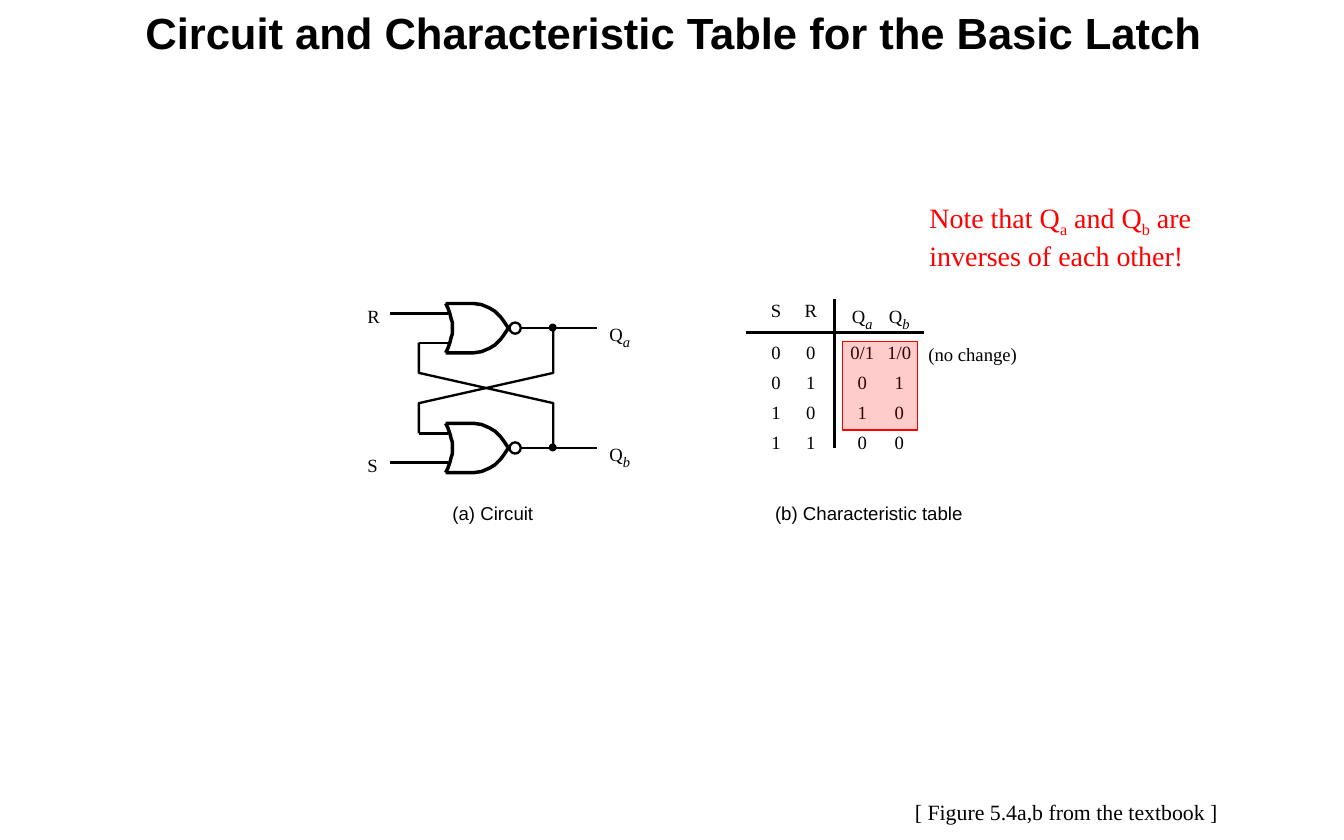
"""Build the slide on the circuit and characteristic table of the basic latch."""
import pptx
import pptx.dml.color
import pptx.enum.shapes
import pptx.enum.text
import pptx.oxml
import pptx.oxml.ns
import pptx.util
from dataclasses import dataclass
from pptx.util import Inches


@dataclass(frozen=True)
class Theme:
    ink: str = "000000"
    accent: str = "FF0000"
    sans: str = "Arial"
    serif: str = "Times New Roman"
    title: int = 28
    note: int = 18
    source: int = 14
    body: int = 12
    index: int = 16
    gate_line: float = 2.25
    wire_line: float = 1.5
    frame_line: float = 0.75


THEME = Theme()

# Odd items of a line of text are subscripts.
TITLE = [["Circuit and Characteristic Table for the Basic Latch"]]
NOTE = [["Note that Q", "a", " and Q", "b", " are"], ["inverses of each other!"]]
SOURCE = [["[ Figure 5.4a,b from the textbook ]"]]
CAPTIONS = [("(a) Circuit", 4.04, 0.73), ("(b) Characteristic table", 6.92, 1.69)]
REMARK = [["(no change)"]]
STATES = [
    [["S"], ["R"], ["Q", "a"], ["Q", "b"]],
    [["0"], ["0"], ["0/1"], ["1/0"]],
    [["0"], ["1"], ["0"], ["1"]],
    [["1"], ["0"], ["1"], ["0"]],
    [["1"], ["1"], ["0"], ["0"]],
]
GATES = [
    {"input": "R", "output": ["Q", "a"], "middle": 2.93, "inward": 1},
    {"input": "S", "output": ["Q", "b"], "middle": 4.0, "inward": -1},
]

GATE_FRONT = [(3.98, 0.22), (4.23, 0.22), (4.3, 0.21), (4.37, 0.18), (4.42, 0.15),
              (4.47, 0.1), (4.5, 0.06), (4.52, 0.03), (4.54, 0)]
GATE_BACK = [(3.98, 0.22), (4, 0.18), (4.02, 0.12), (4.03, 0.08), (4.04, 0.05), (4.04, 0)]
INPUT_LEFT, FEEDBACK_LEFT, GATE_LEFT = 3.48, 3.74, 4.0
BUBBLE, BUBBLE_LEFT, JUNCTION, OUTPUT_RIGHT = 0.1, 4.55, 4.94, 5.33
INPUT_OFFSET, BEND_OFFSET = 0.13, 0.4
COLUMN_EDGES = [6.66, 7.08, 7.45, 7.86, 8.25]
COLUMN_INSETS = [(0.12, 0), (0, 0.05), (0.09, 0), (0, 0.05)]
TABLE_TOP, HEADER_HEIGHT, ROW_HEIGHT = 2.69, 0.37, 0.27

presentation = pptx.Presentation()
presentation.slide_width, presentation.slide_height = Inches(12), Inches(7.5)
shapes = presentation.slides.add_slide(presentation.slide_layouts[6]).shapes


def rgb(color):
    return pptx.dml.color.RGBColor.from_string(color)


def write(frame, lines, size, face=THEME.serif, color=THEME.ink, bold=False,
          centred=False, index_size=None):
    for number, line in enumerate(lines):
        paragraph = frame.add_paragraph() if number else frame.paragraphs[0]
        font = paragraph.font
        font.name, font.size, font.bold = face, pptx.util.Pt(size), bold
        font.color.rgb = rgb(color)
        if centred:
            paragraph.alignment = pptx.enum.text.PP_ALIGN.CENTER
        for position, part in enumerate(line):
            run = paragraph.add_run()
            run.text = part
            if position % 2:
                run.font._element.set("baseline", "-25000")
                if index_size:
                    run.font.size, run.font.italic = pptx.util.Pt(index_size), True


def add_text(lines, left, top, width, height, size, wrap=False, inset=False, **style):
    frame = shapes.add_textbox(*map(Inches, (left, top, width, height))).text_frame
    frame.word_wrap = wrap
    if not wrap:
        frame.auto_size = pptx.enum.text.MSO_AUTO_SIZE.SHAPE_TO_FIT_TEXT
    if not inset:
        frame.margin_left = frame.margin_right = frame.margin_top = frame.margin_bottom = 0
    write(frame, lines, size, **style)


def set_line(line, weight, color=THEME.ink):
    line.color.rgb, line.width = rgb(color), pptx.util.Pt(weight)


def add_wire(start, end, weight=THEME.wire_line):
    wire = shapes.add_connector(pptx.enum.shapes.MSO_CONNECTOR.STRAIGHT,
                                *map(Inches, start + end))
    set_line(wire.line, weight)
    wire._element.spPr.append(pptx.oxml.parse_xml(
        "<a:effectLst %s/>" % pptx.oxml.ns.nsdecls("a")))


def add_curve(points, weight):
    corners = [(Inches(x), Inches(y)) for x, y in points]
    builder = shapes.build_freeform(*corners[0])
    builder.add_line_segments(corners[1:], close=False)
    curve = builder.convert_to_shape()
    curve.shadow.inherit = False
    curve.fill.background()
    set_line(curve.line, weight)


def add_shape(preset, left, top, width, height, weight, fill=None, color=THEME.ink):
    shape = shapes.add_shape(preset, *map(Inches, (left, top, width, height)))
    shape.shadow.inherit = False
    set_line(shape.line, weight, color)
    if fill:
        shape.fill.solid()
        shape.fill.fore_color.rgb = rgb(fill)
    else:
        shape.fill.background()
    return shape


def add_gate(gate, other):
    middle, inward = gate["middle"], gate["inward"]
    outer, inner = middle - inward * INPUT_OFFSET, middle + inward * INPUT_OFFSET
    bend = middle + inward * BEND_OFFSET
    other_bend = other["middle"] - inward * BEND_OFFSET
    other_input = other["middle"] - inward * INPUT_OFFSET
    oval = pptx.enum.shapes.MSO_SHAPE.OVAL
    for profile in (GATE_FRONT, GATE_BACK):
        for side in (-1, 1):
            add_curve([(x, middle + side * y) for x, y in profile], THEME.gate_line)
    add_wire((INPUT_LEFT, outer), (GATE_LEFT, outer))
    add_wire((FEEDBACK_LEFT, inner), (GATE_LEFT, inner))
    add_wire((BUBBLE_LEFT + BUBBLE, middle), (OUTPUT_RIGHT, middle))
    add_curve([(JUNCTION, middle), (JUNCTION, bend), (FEEDBACK_LEFT, other_bend),
               (FEEDBACK_LEFT, other_input)], THEME.wire_line)
    add_shape(oval, BUBBLE_LEFT, middle - BUBBLE / 2, BUBBLE, BUBBLE, THEME.wire_line)
    add_shape(oval, JUNCTION - 0.03, middle - 0.03, 0.05, 0.05, THEME.wire_line, THEME.ink)
    add_text([[gate["input"]]], 3.28, outer - 0.08, 0.11, 0.2, THEME.body)
    add_text([gate["output"]], 5.44, middle - 0.1, 0.19, 0.2, THEME.body,
             index_size=THEME.index)


def add_states():
    heights = [HEADER_HEIGHT] + [ROW_HEIGHT] * (len(STATES) - 1)
    table = shapes.add_table(
        len(STATES), len(STATES[0]), Inches(COLUMN_EDGES[0]), Inches(TABLE_TOP),
        Inches(COLUMN_EDGES[-1] - COLUMN_EDGES[0]), Inches(sum(heights))).table
    table.first_row = table.horz_banding = False
    for column, left, right in zip(table.columns, COLUMN_EDGES, COLUMN_EDGES[1:]):
        column.width = Inches(right - left)
    for row, height, state in zip(table.rows, heights, STATES):
        row.height = Inches(height)
        for cell, value, insets in zip(row.cells, state, COLUMN_INSETS):
            cell.fill.background()
            cell.margin_left, cell.margin_right = map(Inches, insets)
            cell.margin_top = cell.margin_bottom = 0
            write(cell.text_frame, [value], THEME.body, centred=True,
                  index_size=THEME.index)
    add_wire((COLUMN_EDGES[0], 2.97), (COLUMN_EDGES[-1], 2.97), THEME.gate_line)
    add_wire((COLUMN_EDGES[2], 2.67), (COLUMN_EDGES[2], 4), THEME.gate_line)


for gate, other in zip(GATES, reversed(GATES)):
    add_gate(gate, other)
add_states()
add_text(REMARK, 8.29, 3.06, 0.8, 0.2, THEME.body)
for caption, left, width in CAPTIONS:
    add_text([[caption]], left, 4.48, width, 0.2, THEME.body, face=THEME.sans)
add_text(TITLE, 1.01, 0, 10, 0.75, THEME.title, wrap=True, inset=True,
         face=THEME.sans, bold=True, centred=True)
add_text(SOURCE, 8.07, 7.08, 2.93, 0.34, THEME.source, inset=True)
add_text(NOTE, 8.2, 1.74, 2.66, 0.71, THEME.note, inset=True, color=THEME.accent)
highlight = add_shape(pptx.enum.shapes.MSO_SHAPE.RECTANGLE, 7.52, 3.05, 0.67, 0.79,
                      THEME.frame_line, THEME.accent, THEME.accent)
tint = highlight._element.spPr.find(pptx.oxml.ns.qn("a:solidFill"))[0]
tint.append(pptx.oxml.parse_xml('<a:alpha %s val="20000"/>' % pptx.oxml.ns.nsdecls("a")))
presentation.save("out.pptx")
